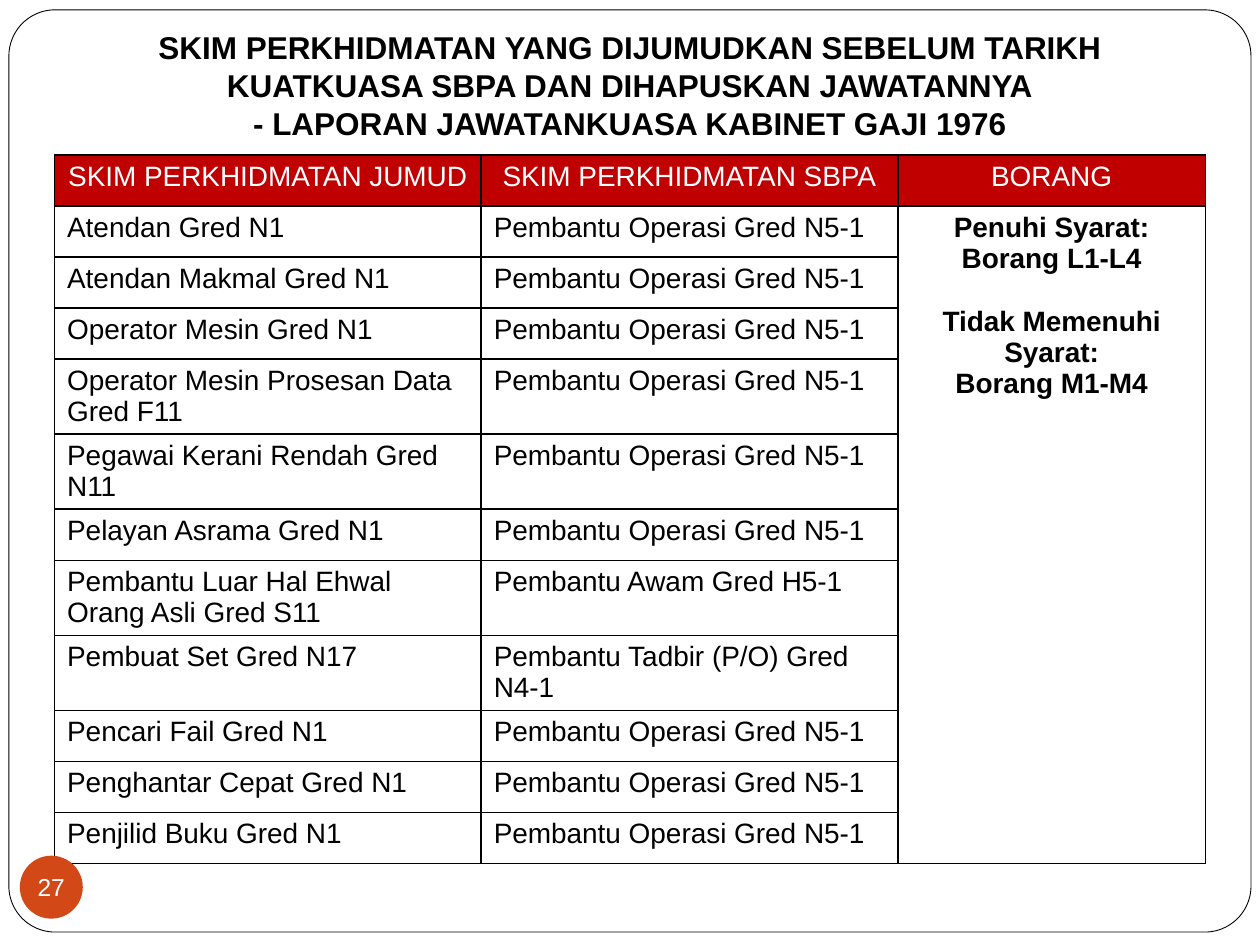
from lxml import etree
from pptx import Presentation
from pptx import util as u
from pptx.dml.color import RGBColor
from pptx.enum import shapes, text
from pptx.oxml import ns

COLOURS = {"ink": "000000", "paper": "FFFFFF", "header": "C00000", "badge": "D34817"}
OPERASI = "Pembantu Operasi Gred N5-1"
HEADINGS = ["SKIM PERKHIDMATAN JUMUD", "SKIM PERKHIDMATAN SBPA", "BORANG"]
SCHEMES = [
    ("Atendan Gred N1", OPERASI),
    ("Atendan Makmal Gred N1", OPERASI),
    ("Operator Mesin Gred N1", OPERASI),
    ("Operator Mesin Prosesan Data Gred F11", OPERASI),
    ("Pegawai Kerani Rendah Gred N11", OPERASI),
    ("Pelayan Asrama Gred N1", OPERASI),
    ("Pembantu Luar Hal Ehwal Orang Asli Gred S11", "Pembantu Awam Gred H5-1"),
    ("Pembuat Set Gred N17", "Pembantu Tadbir (P/O) Gred N4-1"),
    ("Pencari Fail Gred N1", OPERASI),
    ("Penghantar Cepat Gred N1", OPERASI),
    ("Penjilid Buku Gred N1", OPERASI),
]
FORMS = ["Penuhi Syarat: Borang L1-L4", "Tidak Memenuhi Syarat:", "Borang M1-M4"]
TITLE = (
    "SKIM PERKHIDMATAN YANG DIJUMUDKAN SEBELUM TARIKH KUATKUASA SBPA "
    "DAN DIHAPUSKAN JAWATANNYA\v- LAPORAN JAWATANKUASA KABINET GAJI 1976"
)


def rgb(name):
    return RGBColor.from_string(COLOURS[name])


def write(frame, lines, size, colour, bold=False, align=text.PP_ALIGN.CENTER):
    frame.text = "\n".join(lines)
    for paragraph in frame.paragraphs:
        paragraph.alignment = align
        values = {"name": "Arial", "size": u.Pt(size), "bold": bold}
        for run in paragraph.runs:
            for key, value in values.items():
                setattr(run.font, key, value)
            run.font.color.rgb = rgb(colour)


deck = Presentation()
deck.slide_width, deck.slide_height = u.Cm(25.4), u.Cm(19.05)
slide = deck.slides.add_slide(deck.slide_layouts[6])

border = slide.shapes.add_shape(
    shapes.MSO_SHAPE.ROUNDED_RECTANGLE, u.Cm(0.18), u.Cm(0.2), u.Cm(25.04), u.Cm(18.59)
)
border.adjustments[0] = 0.05
border.shadow.inherit = False
border.fill.solid()
border.fill.fore_color.rgb = rgb("paper")
border.line.color.rgb = rgb("ink")
border.line.width = u.Pt(0.5)

title = slide.shapes.add_textbox(u.Cm(1.9), u.Cm(-0.08), u.Cm(21.6), u.Cm(3.18)).text_frame
title_format = {
    "word_wrap": True,
    "vertical_anchor": text.MSO_ANCHOR.BOTTOM,
    "margin_bottom": u.Cm(0.25),
}
for key, value in title_format.items():
    setattr(title, key, value)
write(title, [TITLE], 18, "ink", bold=True)

widths = [8.6, 8.4, 6.2]
row_height = 1.03
row_count = len(SCHEMES) + 1
table = slide.shapes.add_table(
    row_count, len(widths), u.Cm(1.1), u.Cm(3.12), u.Cm(sum(widths)), u.Cm(row_height * row_count)
).table
table.first_row = False
table.horz_banding = False
for column, width in zip(table.columns, widths):
    column.width = u.Cm(width)
for row in table.rows:
    row.height = u.Cm(row_height)

for cell in table.iter_cells():
    cell.margin_bottom = u.Cm(0.03)
    cell.fill.background()
    properties = cell._tc.get_or_add_tcPr()
    for position, side in enumerate(["lnL", "lnR", "lnT", "lnB"]):
        edge = etree.Element(ns.qn(f"a:{side}"), w=str(u.Pt(1)))
        fill = etree.SubElement(edge, ns.qn("a:solidFill"))
        etree.SubElement(fill, ns.qn("a:srgbClr"), val=COLOURS["ink"])
        properties.insert(position, edge)

for index, heading in enumerate(HEADINGS):
    cell = table.cell(0, index)
    cell.fill.solid()
    cell.fill.fore_color.rgb = rgb("header")
    write(cell.text_frame, [heading], 16, "paper")

for row_index, scheme in enumerate(SCHEMES, 1):
    for index, name in enumerate(scheme):
        frame = table.cell(row_index, index).text_frame
        write(frame, [name], 16, "ink", align=text.PP_ALIGN.LEFT)

forms = table.cell(1, 2)
forms.merge(table.cell(row_count - 1, 2))
write(forms.text_frame, FORMS, 16, "ink", bold=True)
forms.text_frame.paragraphs[1].space_before = u.Pt(18)

badge = slide.shapes.add_shape(
    shapes.MSO_SHAPE.OVAL, u.Cm(0.4), u.Cm(17.25), u.Cm(1.27), u.Cm(1.27)
)
badge.shadow.inherit = False
badge.fill.solid()
badge.fill.fore_color.rgb = rgb("badge")
badge.line.fill.background()
badge_format = {
    "word_wrap": False,
    "vertical_anchor": text.MSO_ANCHOR.MIDDLE,
    "margin_left": 0,
    "margin_right": 0,
    "margin_top": 0,
    "margin_bottom": 0,
}
for key, value in badge_format.items():
    setattr(badge.text_frame, key, value)
write(badge.text_frame, ["27"], 14, "paper")

deck.save("out.pptx")
